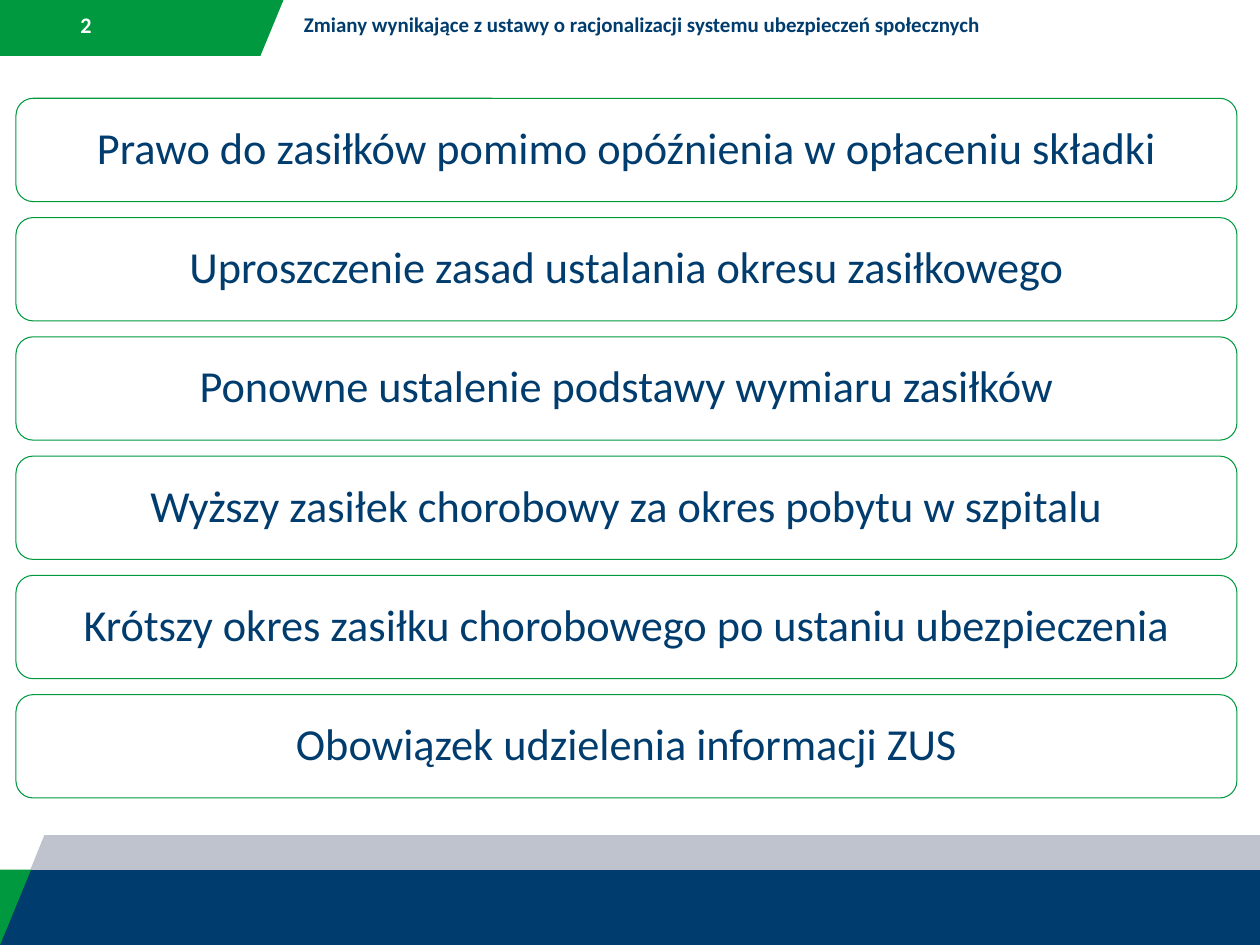
"""Build the slide listing changes in sickness benefits as six stacked cards."""
from dataclasses import dataclass

import pptx
import pptx.dml.color
import pptx.enum.shapes
import pptx.enum.text
import pptx.util


@dataclass(frozen=True)
class Theme:
    navy: str = "003D6E"
    green: str = "00993F"
    grey: str = "BEC3CE"
    white: str = "FFFFFF"
    font: str = "Calibri"
    number: int = 18
    title: int = 17
    card: int = 36


theme = Theme()
rgb = pptx.dml.color.RGBColor.from_string
inch = pptx.util.Inches
ALIGN = pptx.enum.text.PP_ALIGN
ANCHOR = pptx.enum.text.MSO_ANCHOR

W, H = 14.22, 10.67
CARD_LEFT, CARD_WIDTH = 0.18, 13.78
CARDS_TOP, CARDS_BOTTOM, CARD_GAP = 1.11, 9.01, 0.18
GREY_TOP, NAVY_TOP = 9.43, 9.82

topics = [
    "Prawo do zasiłków pomimo opóźnienia w opłaceniu składki",
    "Uproszczenie zasad ustalania okresu zasiłkowego",
    "Ponowne ustalenie podstawy wymiaru zasiłków",
    "Wyższy zasiłek chorobowy za okres pobytu w szpitalu",
    "Krótszy okres zasiłku chorobowego po ustaniu ubezpieczenia",
    "Obowiązek udzielenia informacji ZUS",
]
bands = [
    (theme.green, [(0, 0), (3.2, 0), (2.94, 0.63), (0, 0.63)]),
    (theme.grey, [(0, H), (0.5, GREY_TOP), (W, GREY_TOP), (W, H)]),
    (theme.navy, [(0, NAVY_TOP), (W, NAVY_TOP), (W, H), (0, H)]),
    (theme.green, [(0, NAVY_TOP), (0.35, NAVY_TOP), (0, H)]),
]


def write(sp, text, size, color, bold, align, anchor):
    tf = sp.text_frame
    tf.text = text
    tf.word_wrap = True
    tf.auto_size = pptx.enum.text.MSO_AUTO_SIZE.NONE
    tf.vertical_anchor = anchor
    p = tf.paragraphs[0]
    p.alignment = align
    p.font.name = theme.font
    p.font.size = pptx.util.Pt(size)
    p.font.bold = bold
    p.font.color.rgb = rgb(color)
    return p


prs = pptx.Presentation()
prs.slide_width, prs.slide_height = inch(W), inch(H)
s = prs.slides.add_slide(prs.slide_layouts[5])

for color, points in bands:
    start, *rest = [(inch(x), inch(y)) for x, y in points]
    outline = s.shapes.build_freeform(*start)
    outline.add_line_segments(rest)
    sp = outline.convert_to_shape()
    sp.shadow.inherit = False
    sp.fill.solid()
    sp.fill.fore_color.rgb = rgb(color)
    sp.line.fill.background()

title = s.shapes.title
title.left, title.top, title.width, title.height = map(inch, (3.33, 0.08, 10.08, 0.42))
write(title, "Zmiany wynikające z ustawy o racjonalizacji systemu ubezpieczeń społecznych",
      theme.title, theme.navy, True, ALIGN.LEFT, ANCHOR.TOP)

number = s.shapes.add_textbox(*map(inch, (0.81, 0.08, 2.01, 0.42)))
write(number, "2", theme.number, theme.white, True, ALIGN.LEFT, ANCHOR.TOP)

pitch = (CARDS_BOTTOM - CARDS_TOP + CARD_GAP) / len(topics)
for row, topic in enumerate(topics):
    card = s.shapes.add_shape(
        pptx.enum.shapes.MSO_SHAPE.ROUNDED_RECTANGLE, inch(CARD_LEFT),
        inch(CARDS_TOP + row * pitch), inch(CARD_WIDTH), inch(pitch - CARD_GAP))
    card.shadow.inherit = False
    card.fill.solid()
    card.fill.fore_color.rgb = rgb(theme.white)
    card.line.color.rgb = rgb(theme.green)
    card.line.width = pptx.util.Pt(0.85)
    p = write(card, topic, theme.card, theme.navy, False, ALIGN.CENTER, ANCHOR.MIDDLE)
    p.line_spacing = 0.9

prs.save("out.pptx")
